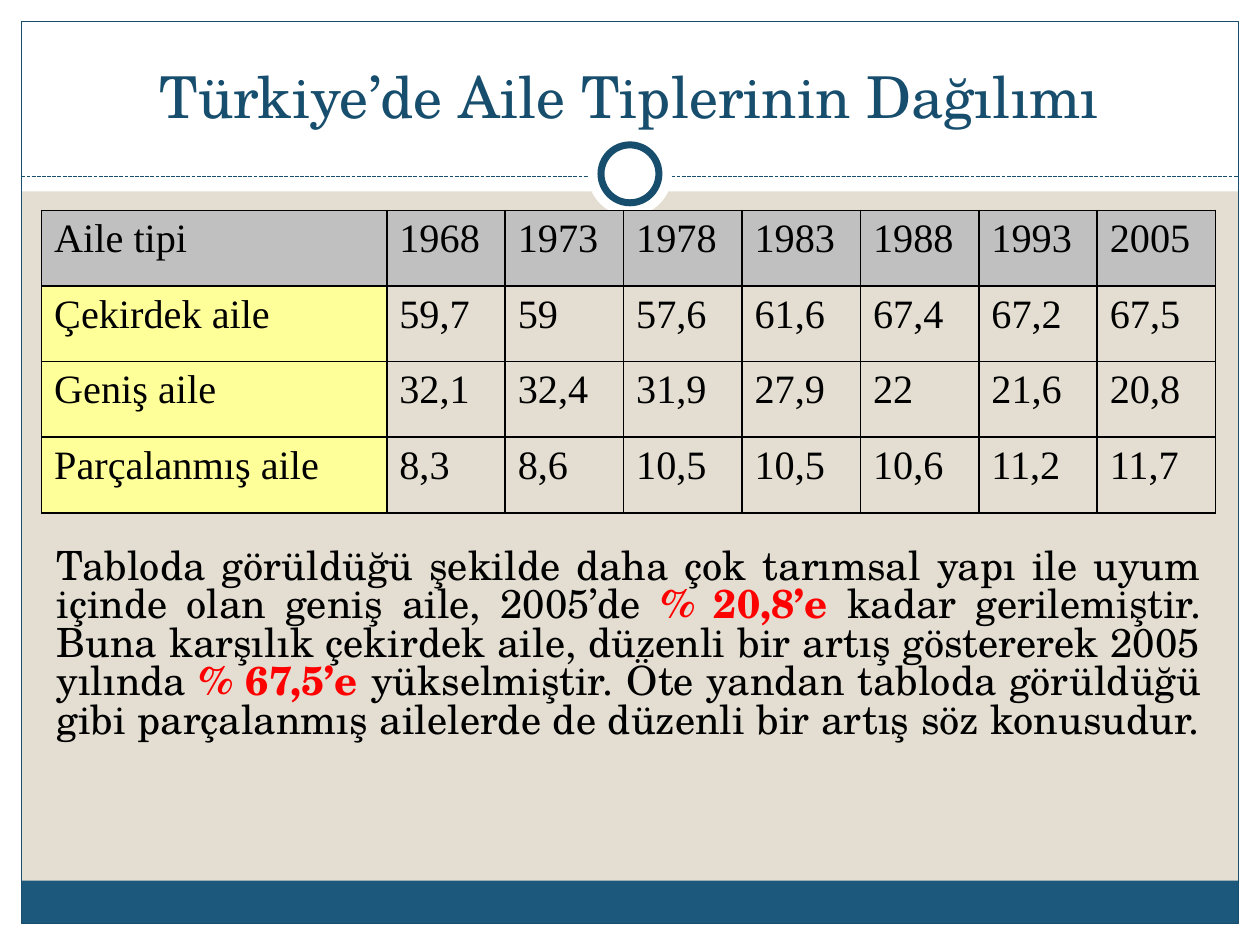
from lxml.etree import SubElement
from pptx import Presentation
from pptx.dml.color import RGBColor
from pptx.enum.dml import MSO_LINE
from pptx.enum.shapes import MSO_CONNECTOR, MSO_SHAPE
from pptx.enum.text import MSO_ANCHOR, PP_ALIGN
from pptx.oxml.ns import qn
from pptx.util import Inches, Pt

THEME = {
    "background": "E3DED1", "white": "FFFFFF", "navy": "184E6D", "footer": "1B587C",
    "ink": "000000", "accent": "FF0000", "header": "C0C0C0", "label": "FFFF99",
    "serif": "TeX Gyre Schola", "table_font": "Times New Roman",
    "title_size": 33, "text_size": 23,
}

TITLE = "Türkiye’de Aile Tiplerinin Dağılımı"
FAMILY_ROWS = [
    ("Aile tipi", "1968", "1973", "1978", "1983", "1988", "1993", "2005"),
    ("Çekirdek aile", "59,7", "59", "57,6", "61,6", "67,4", "67,2", "67,5"),
    ("Geniş aile", "32,1", "32,4", "31,9", "27,9", "22", "21,6", "20,8"),
    ("Parçalanmış aile", "8,3", "8,6", "10,5", "10,5", "10,6", "11,2", "11,7"),
]
COMMENTARY = [
    ("Tabloda görüldüğü şekilde daha çok tarımsal yapı ile uyum içinde olan geniş aile, 2005’de ", False),
    ("% 20,8’e ", True),
    ("kadar gerilemiştir. Buna karşılık çekirdek aile, düzenli bir artış göstererek 2005 yılında ", False),
    ("% 67,5’e ", True),
    ("yükselmiştir. Öte yandan tabloda görüldüğü gibi parçalanmış ailelerde de düzenli bir artış söz konusudur. ", False),
]

WIDTH, HEIGHT, MARGIN = 10, 7.5, 0.17
RULE_TOP = 1.4
FOOTER_HEIGHT = 0.34
PANELS = [
    (0, HEIGHT - MARGIN, WIDTH, MARGIN, "white"),
    (0, 0, WIDTH, 1.52, "white"),
    (0, 0, MARGIN, HEIGHT, "white"),
    (WIDTH - MARGIN, 0, MARGIN, HEIGHT, "white"),
    (MARGIN, HEIGHT - MARGIN - FOOTER_HEIGHT, WIDTH - 2 * MARGIN, FOOTER_HEIGHT, "footer"),
]
RING_CENTER = (WIDTH / 2, 1.38)
LABEL_WIDTH, YEAR_WIDTH, ROW_HEIGHT = 2.74, 0.94, 0.6


def color(name):
    return RGBColor.from_string(THEME[name])


def add_panel(slide, kind, left, top, width, height, fill=None, line=None, weight=0.75):
    panel = slide.shapes.add_shape(kind, Inches(left), Inches(top), Inches(width), Inches(height))
    panel.shadow.inherit = False
    if fill:
        panel.fill.solid()
        panel.fill.fore_color.rgb = color(fill)
    else:
        panel.fill.background()
    if line:
        panel.line.color.rgb = color(line)
        panel.line.width = Pt(weight)
    else:
        panel.line.fill.background()


def add_ring_disc(slide, diameter, **style):
    x, y = RING_CENTER
    add_panel(slide, MSO_SHAPE.OVAL, x - diameter / 2, y - diameter / 2,
              diameter, diameter, "white", **style)


def add_frame(slide):
    for left, top, width, height, fill in PANELS:
        add_panel(slide, MSO_SHAPE.RECTANGLE, left, top, width, height, fill)
    add_panel(slide, MSO_SHAPE.RECTANGLE, MARGIN, MARGIN,
              WIDTH - 2 * MARGIN, HEIGHT - 2 * MARGIN, line="navy")
    rule = slide.shapes.add_connector(
        MSO_CONNECTOR.STRAIGHT, Inches(MARGIN), Inches(RULE_TOP),
        Inches(WIDTH - MARGIN), Inches(RULE_TOP))
    rule.line.color.rgb = color("navy")
    rule.line.width = Pt(0.75)
    rule.line.dash_style = MSO_LINE.SQUARE_DOT
    SubElement(rule.element.spPr, qn("a:effectLst"))
    add_ring_disc(slide, 0.67)
    add_ring_disc(slide, 0.46, line="navy", weight=4)


def style_run(run, face, size, ink, bold=False):
    run.font.name = THEME[face]
    run.font.size = Pt(THEME[size])
    run.font.color.rgb = color(ink)
    run.font.bold = bold


def add_text(slide, left, top, width, height, pieces, size, align, anchor):
    frame = slide.shapes.add_textbox(
        Inches(left), Inches(top), Inches(width), Inches(height)).text_frame
    frame.word_wrap = True
    frame.vertical_anchor = anchor
    paragraph = frame.paragraphs[0]
    paragraph.alignment = align
    for words, ink, bold in pieces:
        run = paragraph.add_run()
        run.text = words
        style_run(run, "serif", size, ink, bold)
    return paragraph


def add_borders(cell):
    properties = cell._tc.get_or_add_tcPr()
    for side in ("lnL", "lnR", "lnT", "lnB"):
        border = SubElement(properties, qn(f"a:{side}"), w=str(Pt(1)))
        fill = SubElement(border, qn("a:solidFill"))
        SubElement(fill, qn("a:srgbClr"), val=THEME["ink"])


def fill_cell(cell, words, fill):
    cell.text_frame.text = words
    paragraph = cell.text_frame.paragraphs[0]
    paragraph.alignment = PP_ALIGN.JUSTIFY
    indent = Inches(0.38)
    properties = paragraph._p.get_or_add_pPr()
    properties.set("marL", str(indent))
    properties.set("indent", str(-indent))
    style_run(paragraph.runs[0], "table_font", "text_size", "ink")
    add_borders(cell)
    if fill:
        cell.fill.solid()
        cell.fill.fore_color.rgb = color(fill)
    else:
        cell.fill.background()


def add_family_table(slide):
    widths = [LABEL_WIDTH] + [YEAR_WIDTH] * (len(FAMILY_ROWS[0]) - 1)
    table = slide.shapes.add_table(
        len(FAMILY_ROWS), len(widths), Inches(0.33), Inches(1.67),
        Inches(sum(widths)), Inches(ROW_HEIGHT * len(FAMILY_ROWS))).table
    table.first_row = False
    table.horz_banding = False
    for column, width in zip(table.columns, widths):
        column.width = Inches(width)
    for row_index, row in enumerate(FAMILY_ROWS):
        for column_index, words in enumerate(row):
            fill = "header" if row_index == 0 else "label" if column_index == 0 else None
            fill_cell(table.cell(row_index, column_index), words, fill)


def main():
    presentation = Presentation()
    presentation.slide_width = Inches(WIDTH)
    presentation.slide_height = Inches(HEIGHT)
    slide = presentation.slides.add_slide(presentation.slide_layouts[6])
    slide.background.fill.solid()
    slide.background.fill.fore_color.rgb = color("background")
    add_frame(slide)
    add_text(slide, 0.33, 0.25, 9.33, 0.83, [(TITLE, "navy", False)],
             "title_size", PP_ALIGN.CENTER, MSO_ANCHOR.BOTTOM)
    add_family_table(slide)
    pieces = [(words, "accent" if strong else "ink", strong) for words, strong in COMMENTARY]
    commentary = add_text(slide, 0.35, 4.31, 9.29, 2.39, pieces,
                          "text_size", PP_ALIGN.JUSTIFY, MSO_ANCHOR.TOP)
    commentary.line_spacing = 0.8
    commentary.space_before = Pt(0.2 * THEME["text_size"])
    presentation.save("out.pptx")


if __name__ == "__main__":
    main()
